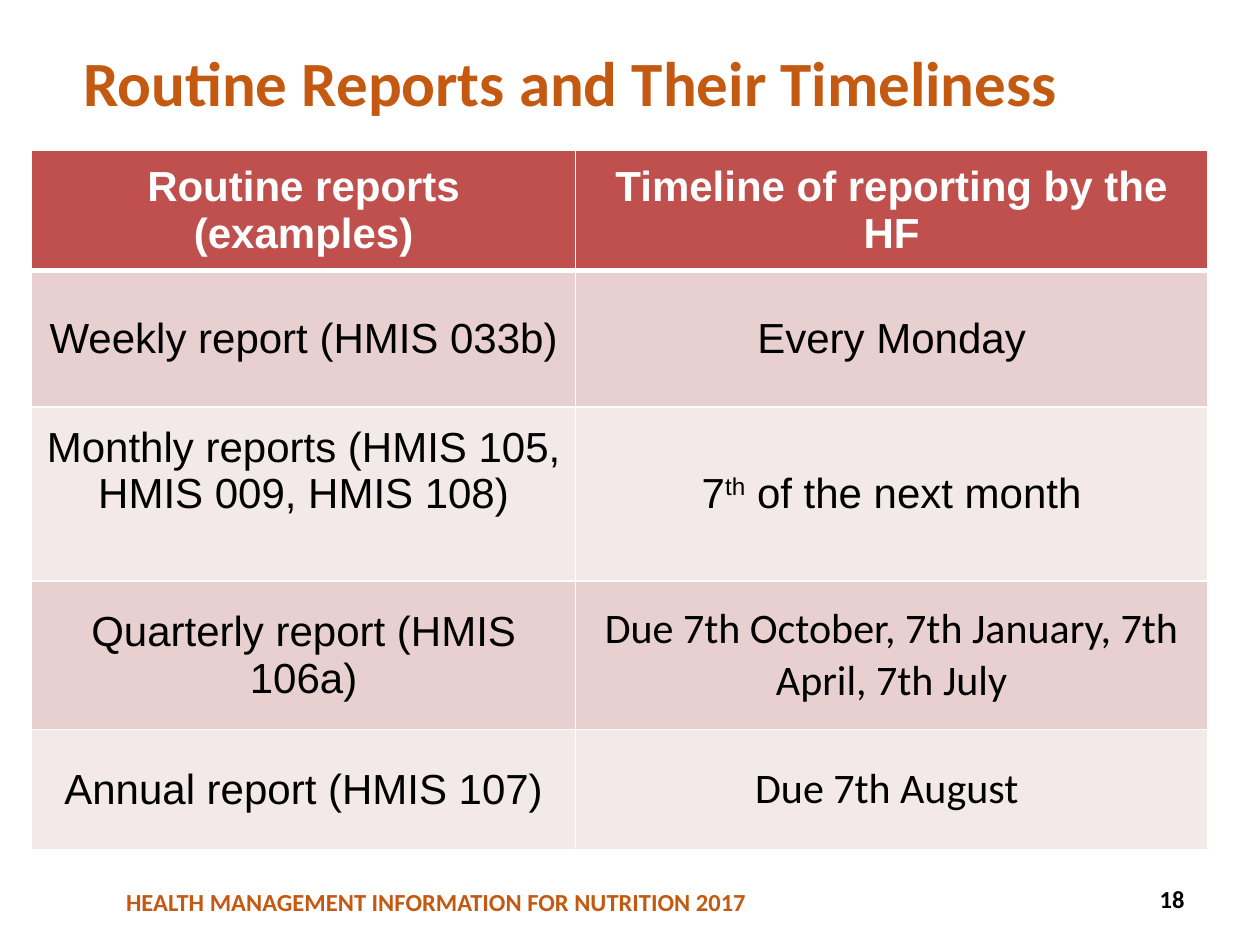
from dataclasses import dataclass

from lxml import etree
from pptx import Presentation
from pptx.dml.color import RGBColor
from pptx.enum import shapes, text
from pptx.oxml import ns
from pptx.util import Pt

COLORS = {
    "orange": "C45911",
    "header": "C0504D",
    "band_dark": "E8D0D0",
    "band_light": "F4E9E9",
    "white": "FFFFFF",
    "black": "000000",
}
COLUMN_WIDTHS = (311, 361)
HEADER = ("Routine reports (examples)", "Timeline of reporting by the HF")


@dataclass
class Style:
    size: float
    font: str
    color: str
    bold: bool = False
    align: text.PP_ALIGN = text.PP_ALIGN.CENTER


@dataclass
class Report:
    name: str
    timeline: tuple[str, ...]  # every second piece is superscript
    height: float
    timeline_font: str = "Arial"
    name_bottom: float = 3.6


REPORTS = (
    Report("Weekly report (HMIS 033b)", ("Every Monday",), 78.2),
    Report("Monthly reports (HMIS 105, HMIS 009, HMIS 108)",
           ("7", "th", " of the next month"), 99.4, name_bottom=30),
    Report("Quarterly report (HMIS 106a)",
           ("Due 7th October, 7th January, 7th April, 7th July",), 85, "Calibri"),
    Report("Annual report (HMIS 107)", ("Due 7th August ",), 68.4, "Calibri"),
)


def rgb(name: str) -> RGBColor:
    return RGBColor.from_string(COLORS[name])


def write(frame, pieces: tuple[str, ...], style: Style) -> None:
    """Fill a frame with one paragraph; odd-numbered pieces are raised."""
    para = frame.paragraphs[0]
    para.alignment = style.align
    for index, piece in enumerate(pieces):
        span = para.add_run()
        span.text = piece
        span.font.size = Pt(style.size)
        span.font.name = style.font
        span.font.bold = style.bold
        span.font.color.rgb = rgb(style.color)
        if index % 2:
            span._r.get_or_add_rPr().set("baseline", "30000")


def add_borders(cell, widths: dict[str, float]) -> None:
    properties = cell._tc.get_or_add_tcPr()
    for side, width in widths.items():
        line = etree.SubElement(properties, ns.qn(f"a:ln{side}"), w=str(int(Pt(width))))
        fill = etree.SubElement(line, ns.qn("a:solidFill"))
        etree.SubElement(fill, ns.qn("a:srgbClr"), val=COLORS["white"])


def format_cell(cell, pieces: tuple[str, ...], style: Style, fill: str,
                top: float = 1, bottom: float = 1) -> None:
    add_borders(cell, {"L": 1, "R": 1, "T": top, "B": bottom})
    cell.fill.solid()
    cell.fill.fore_color.rgb = rgb(fill)
    cell.vertical_anchor = text.MSO_ANCHOR.MIDDLE
    write(cell.text_frame, pieces, style)


def add_report_table(page) -> None:
    heights = [68.4] + [report.height for report in REPORTS]
    table = page.shapes.add_table(
        len(heights), len(COLUMN_WIDTHS), Pt(18), Pt(86),
        Pt(sum(COLUMN_WIDTHS)), Pt(sum(heights))).table
    for column, width in zip(table.columns, COLUMN_WIDTHS):
        column.width = Pt(width)
    for row, height in zip(table.rows, heights):
        row.height = Pt(height)

    for column, label in enumerate(HEADER):
        format_cell(table.cell(0, column), (label,),
                    Style(24, "Arial", "white", True), "header", bottom=3)
    for row, report in enumerate(REPORTS, start=1):
        fill = "band_dark" if row % 2 else "band_light"
        top = 3 if row == 1 else 1
        name, timeline = table.cell(row, 0), table.cell(row, 1)
        format_cell(name, (report.name,), Style(24, "Arial", "black"), fill, top)
        name.margin_bottom = Pt(report.name_bottom)
        format_cell(timeline, report.timeline,
                    Style(24, report.timeline_font, "black"), fill, top)


def add_title(page) -> None:
    title = page.shapes.title
    title.left, title.top, title.width, title.height = Pt(20), Pt(21), Pt(612), Pt(69)
    title.text_frame.vertical_anchor = text.MSO_ANCHOR.TOP
    write(title.text_frame, ("Routine Reports and Their Timeliness",),
          Style(36, "Calibri", "orange", True))


def add_footer(page) -> None:
    box = page.shapes.add_textbox(Pt(72), Pt(503), Pt(430), Pt(25))
    frame = box.text_frame
    frame.word_wrap = True
    frame.margin_left = 0
    frame.vertical_anchor = text.MSO_ANCHOR.MIDDLE
    write(frame, ("HEALTH MANAGEMENT INFORMATION FOR NUTRITION 2017",),
          Style(14, "Calibri", "orange", True, text.PP_ALIGN.LEFT))


def add_page_number(page) -> None:
    box = page.shapes.add_shape(
        shapes.MSO_SHAPE.RECTANGLE, Pt(516), Pt(499), Pt(168), Pt(29))
    box.shadow.inherit = False
    box.fill.solid()
    box.fill.fore_color.rgb = rgb("white")
    box.line.fill.background()
    box.text_frame.vertical_anchor = text.MSO_ANCHOR.MIDDLE
    write(box.text_frame, ("18",),
          Style(14, "Calibri", "black", True, text.PP_ALIGN.RIGHT))


def main() -> None:
    deck = Presentation()
    deck.slide_width, deck.slide_height = Pt(720), Pt(540)
    page = deck.slides.add_slide(deck.slide_layouts[5])
    add_title(page)
    add_report_table(page)
    add_footer(page)
    add_page_number(page)
    deck.save("out.pptx")


if __name__ == "__main__":
    main()
